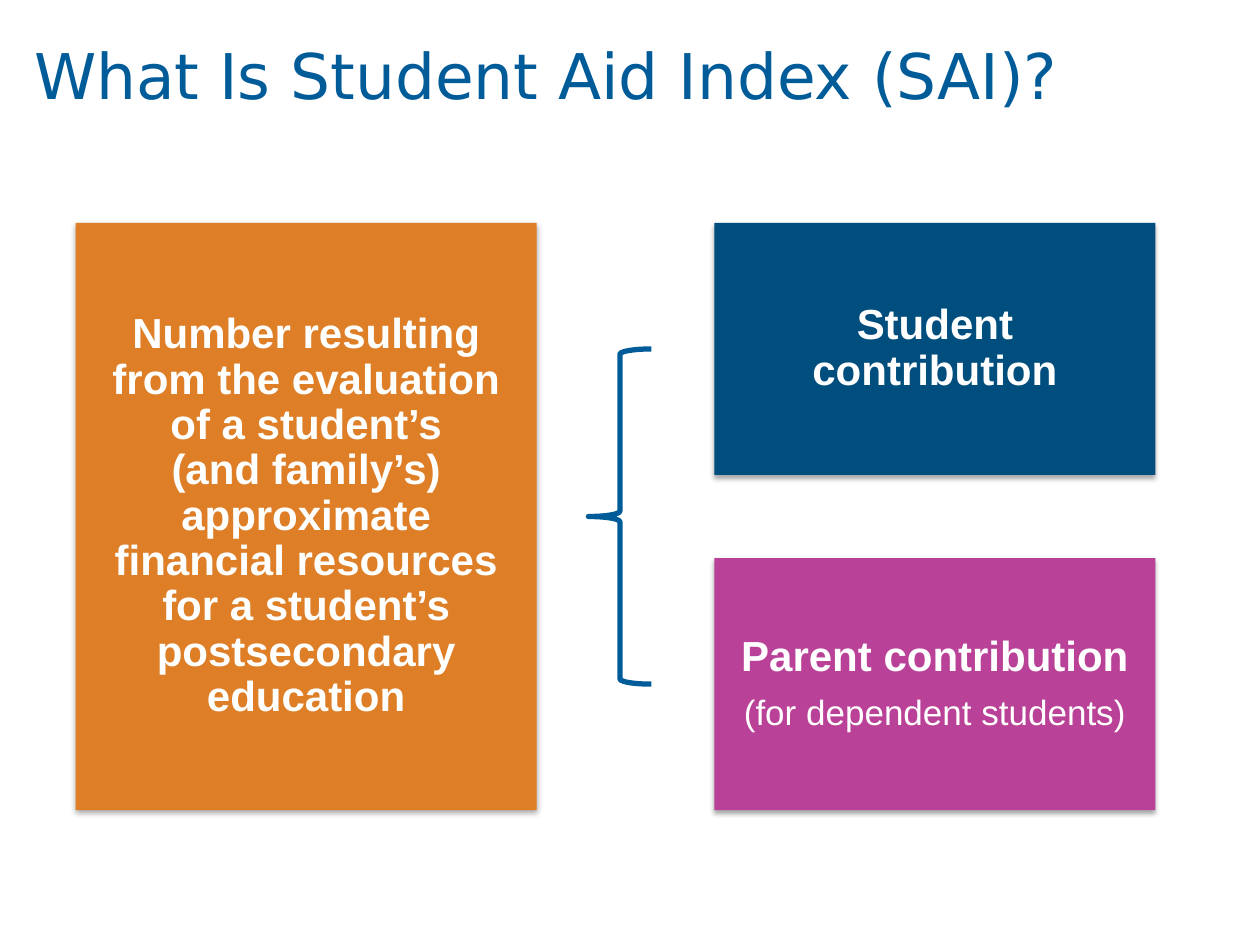
"""Build a slide that explains the Student Aid Index and its two contributions."""
import pptx
import pptx.dml.color
import pptx.enum.shapes
import pptx.enum.text
import pptx.oxml
import pptx.oxml.ns
import pptx.util

Inches = pptx.util.Inches
Pt = pptx.util.Pt
RGBColor = pptx.dml.color.RGBColor
Shape = pptx.enum.shapes.MSO_SHAPE
Align = pptx.enum.text.PP_ALIGN

BLUE = RGBColor(0x00, 0x5B, 0x99)
NAVY = RGBColor(0x00, 0x4E, 0x7D)
ORANGE = RGBColor(0xDE, 0x7E, 0x26)
MAGENTA = RGBColor(0xB9, 0x41, 0x97)
WHITE = RGBColor(0xFF, 0xFF, 0xFF)

TITLE = "What Is Student Aid Index (SAI)?"
DEFINITION = (
    "Number resulting from the evaluation of a student’s\v(and family’s) approximate "
    "financial resources for a student’s postsecondary education"
)
CONTRIBUTIONS = [
    (NAVY, [("Student contribution", 24, True)]),
    (MAGENTA, [("Parent contribution", 24, True), ("(for dependent students)", 20, False)]),
]

TOP = 1.77
CARD_HEIGHT = 2.0
CARD_GAP = 0.66
CARD_STEP = CARD_HEIGHT + CARD_GAP
TOTAL_HEIGHT = CARD_STEP + CARD_HEIGHT
SHADOW = (
    f'<a:effectLst {pptx.oxml.ns.nsdecls("a")}>'
    '<a:outerShdw blurRad="39370" dist="22860" dir="5400000" rotWithShape="0">'
    '<a:srgbClr val="000000"><a:alpha val="35000"/></a:srgbClr>'
    '</a:outerShdw></a:effectLst>'
)


def write(para, text, size, bold=False, font="Arial", color=WHITE, align=Align.CENTER, after=0):
    para.text = text
    para.alignment = align
    para.line_spacing = 0.9
    para.space_before = Pt(0)
    para.space_after = Pt(after)
    for span in para.runs:
        span.font.name = font
        span.font.size = Pt(size)
        span.font.bold = bold
        span.font.color.rgb = color


def add_card(page, left, top, width, height, fill, lines):
    box = page.shapes.add_shape(
        Shape.RECTANGLE, Inches(left), Inches(top), Inches(width), Inches(height)
    )
    box.fill.solid()
    box.fill.fore_color.rgb = fill
    box.line.fill.background()
    box._element.spPr.append(pptx.oxml.parse_xml(SHADOW))
    frame = box.text_frame
    frame.word_wrap = True
    frame.vertical_anchor = pptx.enum.text.MSO_ANCHOR.MIDDLE
    frame.margin_left = frame.margin_right = Inches(0.15)
    frame.margin_top = frame.margin_bottom = Inches(0.15)
    for index, (text, size, bold) in enumerate(lines):
        para = frame.add_paragraph() if index else frame.paragraphs[0]
        write(para, text, size, bold=bold, after=0.35 * size)


def add_brace(page):
    height = CARD_STEP
    top = TOP + (TOTAL_HEIGHT - height) / 2
    brace = page.shapes.add_shape(
        Shape.LEFT_BRACE, Inches(4.67), Inches(top), Inches(0.5), Inches(height)
    )
    brace.shadow.inherit = False
    brace.fill.background()
    brace.line.color.rgb = BLUE
    brace.line.width = Pt(3)


def add_title(page):
    title = page.shapes.title
    title.left, title.top = Inches(0.17), Inches(0)
    title.width, title.height = Inches(9.75), Inches(1.25)
    title.text_frame.word_wrap = True
    title.text_frame.vertical_anchor = pptx.enum.text.MSO_ANCHOR.MIDDLE
    write(title.text_frame.paragraphs[0], TITLE, 36,
          font="DejaVu Sans", color=BLUE, align=Align.LEFT)


def main():
    deck = pptx.Presentation()
    deck.slide_width, deck.slide_height = Inches(10), Inches(7.5)
    page = deck.slides.add_slide(deck.slide_layouts[5])
    add_title(page)
    add_card(page, 0.6, TOP, 3.66, TOTAL_HEIGHT, ORANGE, [(DEFINITION, 24, True)])
    for index, (fill, lines) in enumerate(CONTRIBUTIONS):
        add_card(page, 5.67, TOP + index * CARD_STEP, 3.5, CARD_HEIGHT, fill, lines)
    add_brace(page)
    deck.save("out.pptx")


if __name__ == "__main__":
    main()
